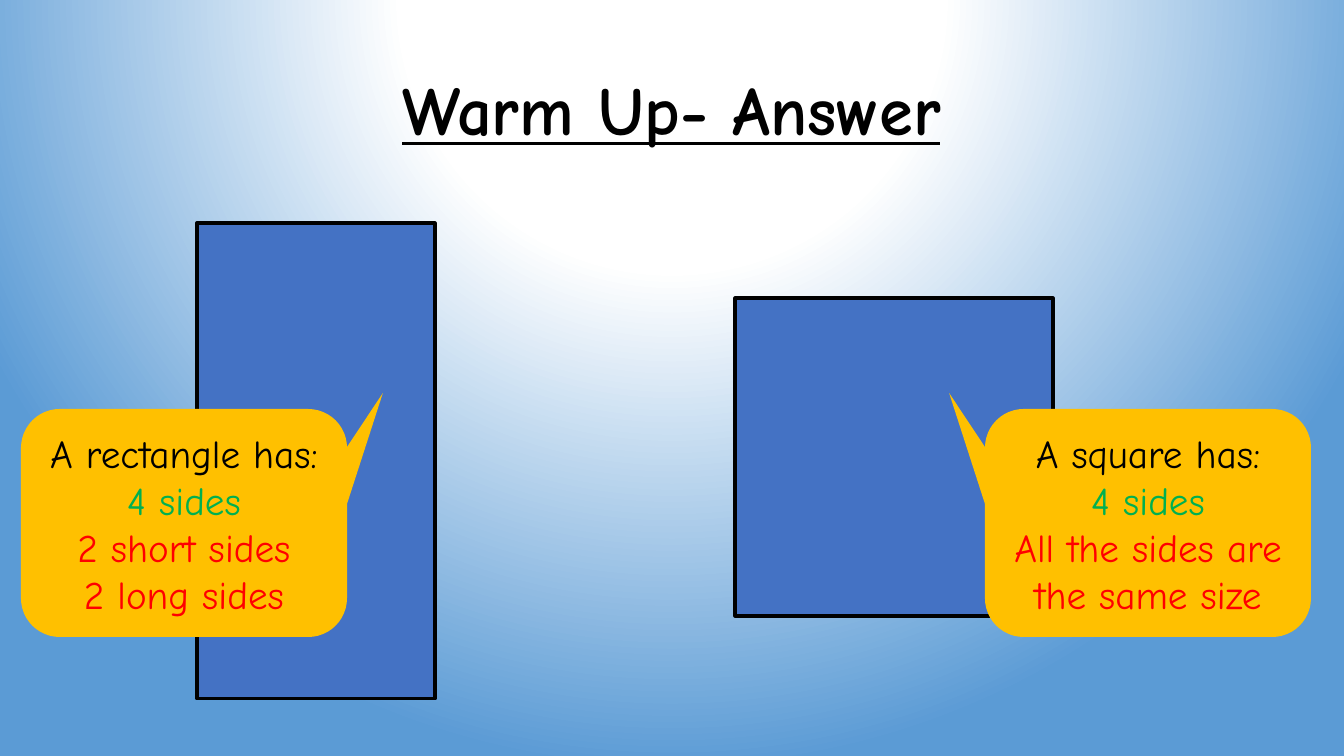
import pptx
import pptx.dml.color
import pptx.enum.shapes
import pptx.enum.text
import pptx.oxml
import pptx.oxml.ns
import pptx.util

PX = 914400 / 100.8
FACE = "Comic Neue"
BLACK, GREEN, RED = "000000", "00B050", "FF0000"
BLUE, GOLD = "4472C4", "FFC000"
KIND = pptx.enum.shapes.MSO_SHAPE
MID = pptx.enum.text.MSO_ANCHOR.MIDDLE
CENTER = pptx.enum.text.PP_ALIGN.CENTER

# Centre of the glow, in thousandths of a percent of the slide
GLOW = {"l": 50000, "t": -80000, "r": 50000, "b": 180000}
STOPS = [(0, "FFFFFF"), (35000, "FFFFFF"), (100000, "5B9BD5")]


def px(n):
    return pptx.util.Emu(round(n * PX))


def color(code):
    return pptx.dml.color.RGBColor.from_string(code)


def assign(item, values):
    for name, value in values.items():
        setattr(item, name, value)


def place(shape, left, top, width, height):
    assign(shape, {"left": px(left), "top": px(top),
                   "width": px(width), "height": px(height)})


def backdrop(slide):
    stops = "".join(f'<a:gs pos="{pos}"><a:srgbClr val="{code}"/></a:gs>'
                    for pos, code in STOPS)
    rect = " ".join(f'{side}="{value}"' for side, value in GLOW.items())
    slide.element.cSld.insert(0, pptx.oxml.parse_xml(
        f'<p:bg {pptx.oxml.ns.nsdecls("p", "a")}><p:bgPr>'
        f'<a:gradFill rotWithShape="1"><a:gsLst>{stops}</a:gsLst>'
        f'<a:path path="circle"><a:fillToRect {rect}/></a:path></a:gradFill>'
        '<a:effectLst/></p:bgPr></p:bg>'))


def write(shape, lines, size, spacing=None, **style):
    frame = shape.text_frame
    assign(frame, {"word_wrap": True, "vertical_anchor": MID,
                   "auto_size": pptx.enum.text.MSO_AUTO_SIZE.NONE})
    for i, (text, code) in enumerate(lines):
        para = frame.add_paragraph() if i else frame.paragraphs[0]
        assign(para, {"alignment": CENTER, "line_spacing": spacing})
        run = para.add_run()
        run.text = text
        assign(run.font, {"name": FACE, "size": pptx.util.Pt(size), **style})
        run.font.color.rgb = color(code)


def title(slide, text):
    shape = slide.shapes.title
    place(shape, 92, 40, 1159, 146)
    write(shape, [(text, BLACK)], 49, 0.9, bold=True, underline=True)


def solid(slide, kind, box, fill):
    shape = slide.shapes.add_shape(kind, *map(px, box))
    shape.shadow.inherit = False
    shape.fill.solid()
    shape.fill.fore_color.rgb = color(fill)
    return shape


def figure(slide, *box):
    shape = solid(slide, KIND.RECTANGLE, box, BLUE)
    shape.line.color.rgb = color(BLACK)
    shape.line.width = pptx.util.Pt(2.25)


def callout(slide, left, side, lines):
    # side is 1 for a tail to the right, -1 for a tail to the left
    shape = solid(slide, KIND.ROUNDED_RECTANGULAR_CALLOUT,
                  (left, 409, 326, 228), GOLD)
    shape.line.fill.background()
    for i, value in enumerate((0.61 * side, -0.57, 0.17)):
        shape.adjustments[i] = value
    write(shape, lines, 28)


def main():
    deck = pptx.Presentation()
    assign(deck, {"slide_width": px(1344), "slide_height": px(756)})
    slide = deck.slides.add_slide(deck.slide_layouts[5])
    backdrop(slide)
    title(slide, "Warm Up- Answer")

    # Rectangle and square
    figure(slide, 197, 223, 238, 476)
    figure(slide, 735, 298, 318, 318)

    # Answers
    callout(slide, 21, 1, [("A rectangle has:", BLACK), ("4 sides", GREEN),
                           ("2 short sides", RED), ("2 long sides", RED)])
    callout(slide, 985, -1, [("A square has:", BLACK), ("4 sides", GREEN),
                             ("All the sides are the same size", RED)])
    deck.save("out.pptx")


if __name__ == "__main__":
    main()
